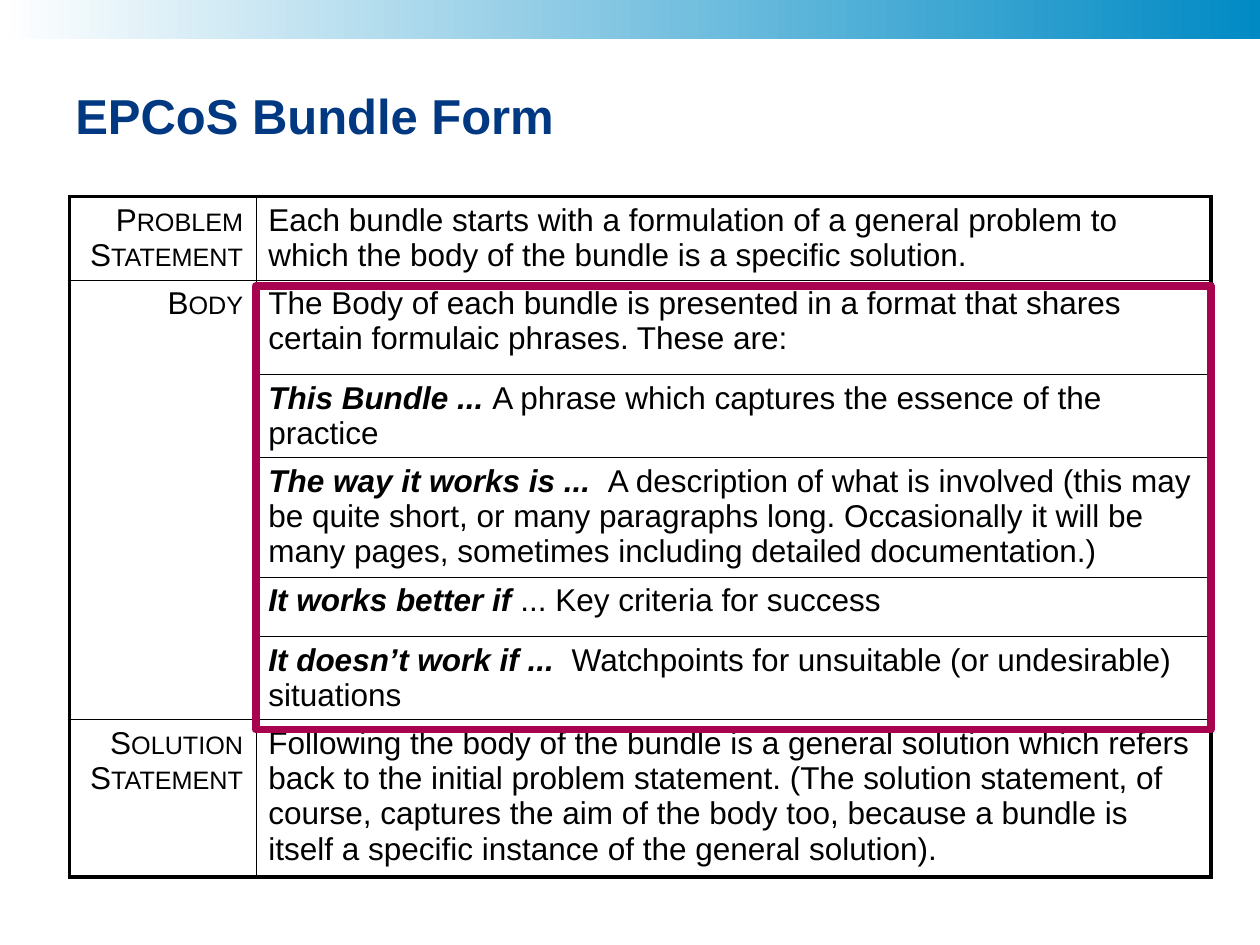
from dataclasses import dataclass

from lxml import etree
from pptx import Presentation
from pptx import util as u
from pptx.dml.color import RGBColor
from pptx.enum import shapes, text
from pptx.oxml import ns


@dataclass(frozen=True)
class Theme:
    """Colours, type sizes and line widths of the slide."""
    font: str = "Arial"
    white: str = "FFFFFF"
    black: str = "000000"
    navy: str = "003882"
    blue: str = "008AC4"
    wine: str = "A8034F"
    head: int = 28
    body: int = 18
    thin: float = 0.25
    thick: float = 2.25
    frame: float = 4.5


T = Theme()
COLS = (1.48, 7.58)
ROWS = [
    (0.66, "Problem Statement", "", "Each bundle starts with a formulation of a general problem "
     "to which the body of the bundle is a specific solution."),
    (0.75, "Body", "", "The Body of each bundle is presented in a format that shares "
     "certain formulaic phrases. These are:"),
    (0.66, "", "This Bundle ... ", "A phrase which captures the essence of the practice"),
    (0.94, "", "The way it works is ...  ", "A description of what is involved (this may be "
     "quite short, or many paragraphs long. Occasionally it will be many pages, sometimes "
     "including detailed documentation.)"),
    (0.47, "", "It works better if", " ... Key criteria for success"),
    (0.66, "", "It doesn’t work if ...  ",
     "Watchpoints for unsuitable (or undesirable) situations"),
    (1.22, "Solution Statement", "", "Following the body of the bundle is a general solution "
     "which refers back to the initial problem statement. (The solution statement, of course, "
     "captures the aim of the body too, because a bundle is itself a specific instance of the "
     "general solution)."),
]


def rgb(code):
    """Turn a hex code into a colour."""
    return RGBColor.from_string(code)


def box(x, y, w, h):
    """Give a place and size in inches."""
    return [u.Inches(n) for n in (x, y, w, h)]


def write(para, words, size, tint, bold=False, slant=False, caps=False):
    """Add one styled run to a paragraph."""
    run = para.add_run()
    run.text = words
    font = run.font
    font.name, font.size = T.font, u.Pt(size)
    font.bold, font.italic = bold, slant
    font.color.rgb = rgb(tint)
    if caps:
        run._r.get_or_add_rPr().set("cap", "small")


def add_band(slide):
    """Draw the gradient band along the top."""
    band = slide.shapes.add_shape(shapes.MSO_SHAPE.RECTANGLE, *box(0, 0, 10, 0.31))
    band.shadow.inherit = False
    band.line.fill.background()
    band.fill.gradient()
    band.fill.gradient_angle = 0
    for stop, tint, spot in zip(band.fill.gradient_stops, (T.white, T.blue), (0, 1)):
        stop.color.rgb, stop.position = rgb(tint), spot


def add_title(slide, words):
    """Write the slide title."""
    frame = slide.shapes.add_textbox(*box(0.5, 0.6, 9.07, 0.63)).text_frame
    frame.word_wrap = True
    frame.vertical_anchor = text.MSO_ANCHOR.MIDDLE
    write(frame.paragraphs[0], words, T.head, T.navy, bold=True)


def set_edges(cell, widths):
    """Set the left, right, top and bottom borders, where zero means none."""
    props = cell._tc.get_or_add_tcPr()
    for spot, (side, width) in enumerate(zip("LRTB", widths)):
        edge = etree.Element(ns.qn(f"a:ln{side}"), w=str(u.Pt(width)))
        if width:
            fill = etree.SubElement(edge, ns.qn("a:solidFill"))
            etree.SubElement(fill, ns.qn("a:srgbClr"), val=T.black)
        else:
            etree.SubElement(edge, ns.qn("a:noFill"))
        props.insert(spot, edge)


def rule(line, col):
    """Give the width of the horizontal rule at a row boundary."""
    if line in (0, len(ROWS)):
        return T.thick
    return 0 if col == 0 and not ROWS[line][1] else T.thin


def add_grid(slide):
    """Build the table of bundle parts."""
    high = sum(row[0] for row in ROWS)
    place = box(0.55, 1.56, sum(COLS), high)
    table = slide.shapes.add_table(len(ROWS), len(COLS), *place).table
    table.first_row = table.horz_banding = False
    for col, width in zip(table.columns, COLS):
        col.width = u.Inches(width)
    for r, (height, label, lead, rest) in enumerate(ROWS):
        table.rows[r].height = u.Inches(height)
        left, right = table.cell(r, 0), table.cell(r, 1)
        para = left.text_frame.paragraphs[0]
        para.alignment = text.PP_ALIGN.RIGHT
        if label:
            write(para, label, T.body, T.black, caps=True)
        para = right.text_frame.paragraphs[0]
        if lead:
            write(para, lead, T.body, T.black, bold=True, slant=True)
        write(para, rest, T.body, T.black)
        for c, cell in enumerate((left, right)):
            cell.margin_bottom = 0
            cell.fill.background()
            sides = (T.thin, T.thick) if c else (T.thick, T.thin)
            set_edges(cell, (*sides, rule(r, c), rule(r + 1, c)))


def add_frame(slide):
    """Draw the frame around the body rows."""
    frame = slide.shapes.add_shape(shapes.MSO_SHAPE.RECTANGLE, *box(2.03, 2.27, 7.58, 3.52))
    frame.shadow.inherit = False
    frame.fill.background()
    frame.line.color.rgb = rgb(T.wine)
    frame.line.width = u.Pt(T.frame)
    etree.SubElement(frame.line._get_or_add_ln(), ns.qn("a:round"))


def main():
    """Build and save the slide."""
    deck = Presentation()
    deck.slide_width, deck.slide_height = u.Inches(10), u.Inches(7.5)
    slide = deck.slides.add_slide(deck.slide_layouts[6])
    add_band(slide)
    add_title(slide, "EPCoS Bundle Form")
    add_grid(slide)
    add_frame(slide)
    deck.save("out.pptx")


if __name__ == "__main__":
    main()
